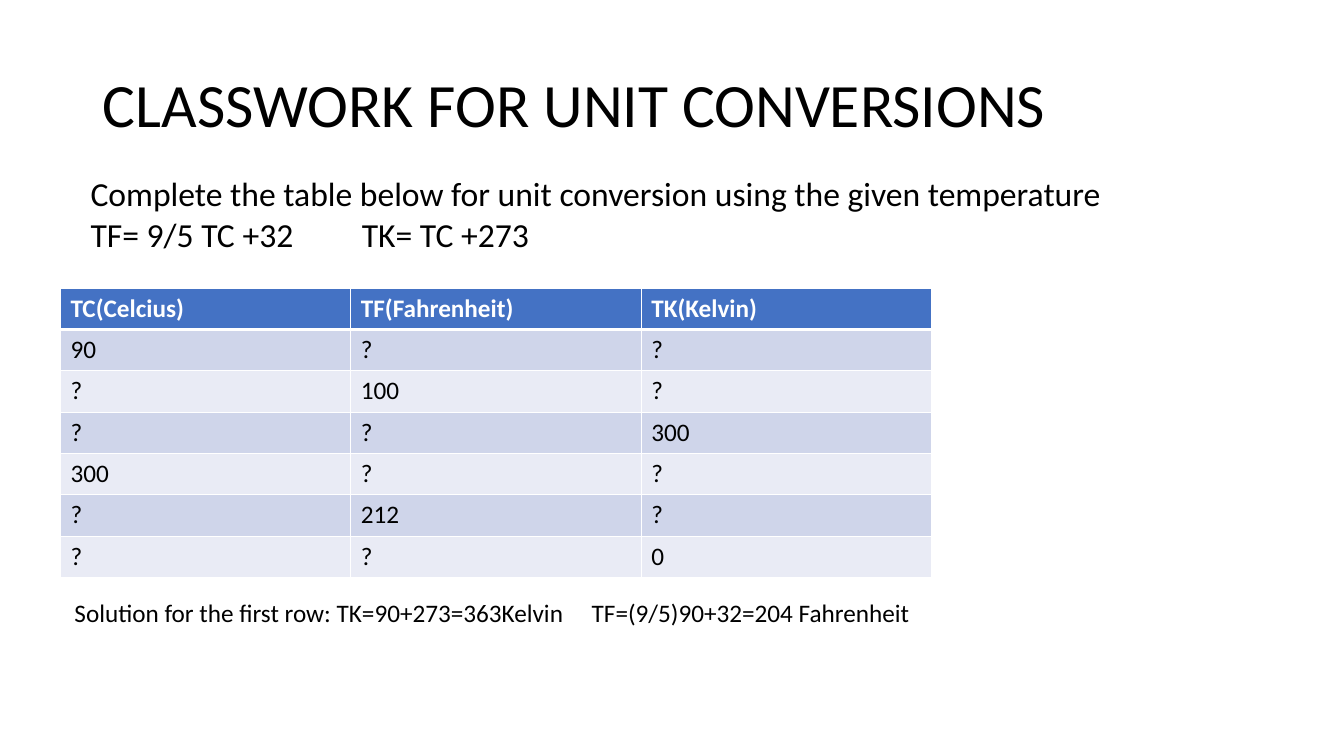
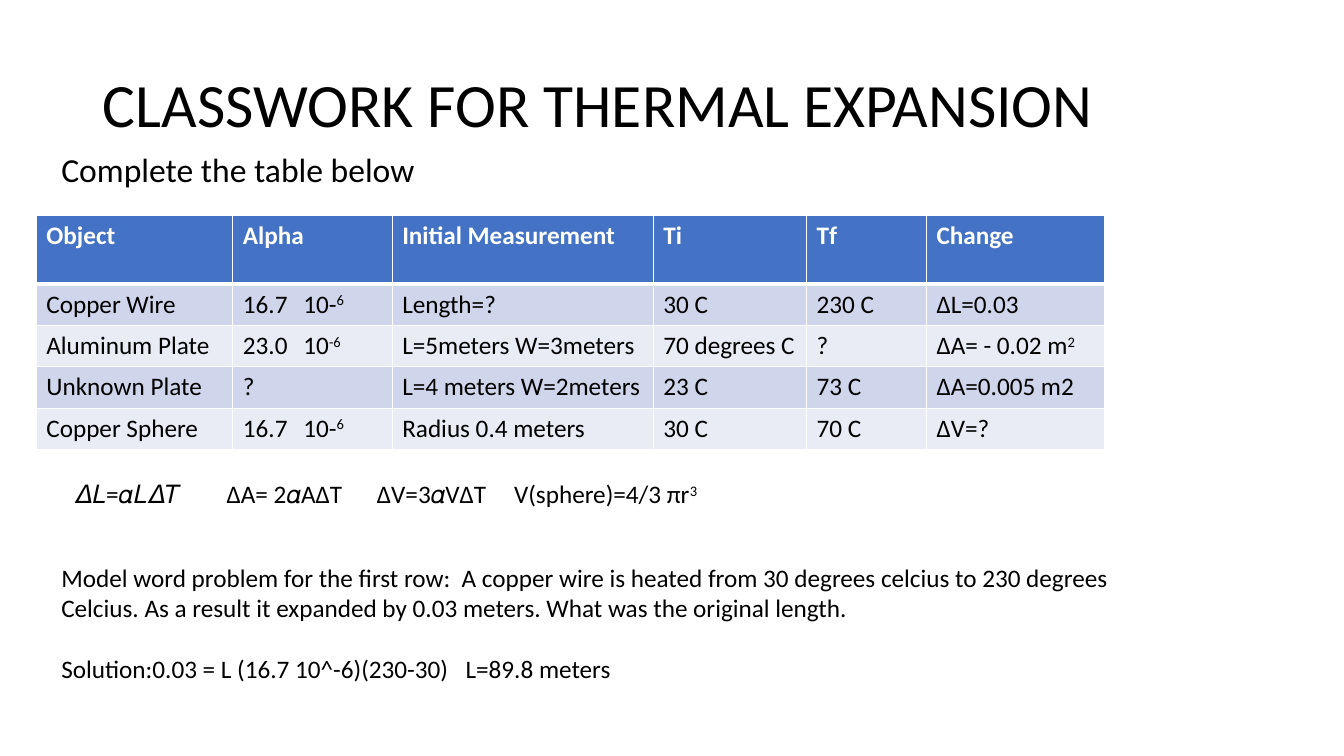
from lxml import etree
from pptx import Presentation
from pptx.dml.color import RGBColor
from pptx.enum import text
from pptx.oxml import ns
from pptx.util import Inches, Pt

FONT = "Calibri"
BLACK, WHITE = "000000", "FFFFFF"
HEADER, BANDS = "4472C4", ("CFD5EA", "E9EBF5")
TITLE_BOX = (0.92, 0.4, 11.5, 1.33)
TITLE_ONLY = 5
ROW = 0.41
POWER_TAB = 0.6

CONVERSIONS = [
    ("TC(Celcius)", "TF(Fahrenheit)", "TK(Kelvin)"),
    ("90", "?", "?"),
    ("?", "100", "?"),
    ("?", "?", "300"),
    ("300", "?", "?"),
    ("?", "212", "?"),
    ("?", "?", "0"),
]
EXPANSIONS = [
    ("Object", "Alpha", "Initial Measurement", "Ti", "Tf", "Change"),
    ("Copper Wire", "16.7\t10-|6|", "Length=?", "30 C", "230 C", "ΔL=0.03"),
    ("Aluminum Plate", "23.0\t10|-6|", "L=5meters W=3meters", "70 degrees C", "?", "ΔA= - 0.02 m|2|"),
    ("Unknown Plate", "?", "L=4 meters W=2meters", "23 C", "73 C", "ΔA=0.005 m2"),
    ("Copper Sphere", "16.7\t10-|6|", "Radius 0.4 meters", "30 C", "70 C", "ΔV=?"),
]


def colour(code):
    """Turn a hex string into a colour."""
    return RGBColor.from_string(code)


def place(shape, box):
    """Move and size a shape to a box in inches."""
    shape.left, shape.top, shape.width, shape.height = map(Inches, box)


def add_tabs(para, stops):
    """Give a paragraph left tab stops, in inches from its start."""
    tabs = etree.SubElement(para._p.get_or_add_pPr(), ns.qn("a:tabLst"))
    for stop in stops:
        etree.SubElement(tabs, ns.qn("a:tab"), pos=str(Inches(stop)), algn="l")


def write(para, words, size, code=BLACK, bold=False, tabs=()):
    """Fill a paragraph run by run; words between bars are superscript."""
    if tabs:
        add_tabs(para, tabs)
    for index, part in enumerate(words.split("|")):
        if not part:
            continue
        span = para.add_run()
        span.text = part
        span.font.name, span.font.size, span.font.bold = FONT, Pt(size), bold
        span.font.color.rgb = colour(code)
        if index % 2:
            span._r.get_or_add_rPr().set("baseline", "30000")


def add_page(deck, title):
    """Add a title-only slide with the shared title style."""
    page = deck.slides.add_slide(deck.slide_layouts[TITLE_ONLY])
    place(page.shapes.title, TITLE_BOX)
    frame = page.shapes.title.text_frame
    frame.auto_size = text.MSO_AUTO_SIZE.NONE
    frame.vertical_anchor = text.MSO_ANCHOR.MIDDLE
    para = frame.paragraphs[0]
    para.alignment = text.PP_ALIGN.LEFT
    para.line_spacing = 0.9
    write(para, title, 44)
    return page


def add_text(page, box, lines, size=18, tabs=(), gap=0):
    """Add a wrapped text box with one paragraph per line."""
    shape = page.shapes.add_textbox(*map(Inches, box))
    frame = shape.text_frame
    frame.word_wrap = True
    for index, line in enumerate(lines):
        para = frame.add_paragraph() if index else frame.paragraphs[0]
        if index and gap:
            para.space_before = Pt(gap)
        write(para, line, size, tabs=tabs if "\t" in line else ())


def add_borders(cell, top, bottom):
    """Draw white cell borders of the given widths in points."""
    props = cell._tc.get_or_add_tcPr()
    for side, width in (("L", 1), ("R", 1), ("T", top), ("B", bottom)):
        line = etree.SubElement(props, ns.qn(f"a:ln{side}"), w=str(Pt(width)))
        fill = etree.SubElement(line, ns.qn("a:solidFill"))
        etree.SubElement(fill, ns.qn("a:srgbClr"), val=WHITE)


def add_grid(page, left, top, widths, rows, header_height=ROW):
    """Add a banded table with a bold header row."""
    heights = [header_height] + [ROW] * (len(rows) - 1)
    box = (left, top, sum(widths), sum(heights))
    table = page.shapes.add_table(len(rows), len(widths), *map(Inches, box)).table
    for column, width in zip(table.columns, widths):
        column.width = Inches(width)
    for number, (row, height, values) in enumerate(zip(table.rows, heights, rows)):
        row.height = Inches(height)
        header = number == 0
        for cell, value in zip(row.cells, values):
            add_borders(cell, 3 if number == 1 else 1, 3 if header else 1)
            cell.fill.solid()
            cell.fill.fore_color.rgb = colour(HEADER if header else BANDS[(number - 1) % 2])
            write(cell.text_frame.paragraphs[0], value, 18, WHITE if header else BLACK,
                  header, (POWER_TAB,) if "\t" in value else ())


def build_conversions(deck):
    """Build the unit conversion slide."""
    page = add_page(deck, "CLASSWORK FOR UNIT CONVERSIONS")
    add_text(page, (0.8, 1.67, 11.06, 0.91),
             ["Complete the table below for unit conversion using the given temperature",
              "TF= 9/5 TC +32\tTK= TC +273"], 24, (2.69,))
    add_grid(page, 0.6, 2.86, [2.88] * 3, CONVERSIONS)
    add_text(page, (0.64, 5.88, 8.75, 0.4),
             ["Solution for the first row: TK=90+273=363Kelvin\tTF=(9/5)90+32=204 Fahrenheit"],
             tabs=(5.13,))


def build_expansion(deck):
    """Build the thermal expansion slide."""
    page = add_page(deck, "CLASSWORK FOR THERMAL EXPANSION")
    add_text(page, (0.51, 1.43, 11.06, 0.5), ["Complete the table below"], 24)
    add_text(page, (0.51, 5.53, 11.34, 1.31),
             ["Model word problem for the first row:  A copper wire is heated from 30 degrees "
              "celcius to 230 degrees Celcius. As a result it expanded by 0.03 meters. "
              "What was the original length.",
              "Solution:0.03 = L (16.7 10^-6)(230-30)\tL=89.8 meters"], tabs=(4.01,), gap=22)
    add_grid(page, 0.36, 2.14, [1.95, 1.58, 2.59, 1.52, 1.19, 1.77], EXPANSIONS, 0.68)
    add_text(page, (0.64, 4.7, 7.99, 0.4),
             ["𝛥𝐿=𝛼𝐿𝛥𝑇\tΔA= 2𝛼AΔT\tΔV=3𝛼VΔT\tV(sphere)=4/3 πr|3|"],
             tabs=(1.51, 3, 4.36))


def main():
    """Build and save the deck."""
    deck = Presentation()
    deck.slide_width, deck.slide_height = Inches(13.33), Inches(7.5)
    build_conversions(deck)
    build_expansion(deck)
    deck.save("out.pptx")


if __name__ == "__main__":
    main()
